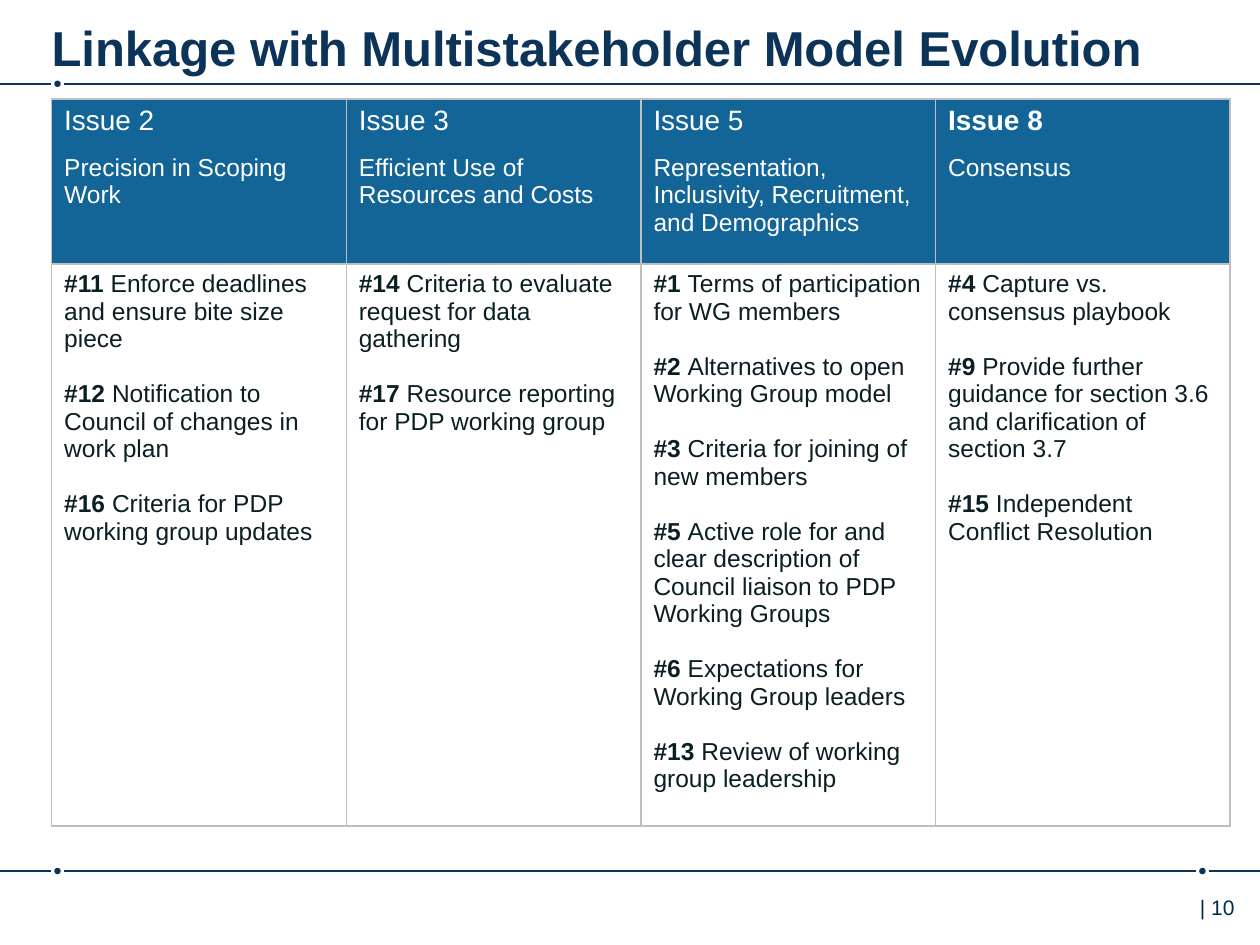
import lxml.etree
import pptx
import pptx.dml.color
import pptx.enum.shapes
import pptx.enum.text
import pptx.oxml
import pptx.oxml.ns
import pptx.util
from pptx.util import Cm

NAVY = pptx.dml.color.RGBColor(0x0C, 0x34, 0x58)
PAGE_NAVY = pptx.dml.color.RGBColor(0x00, 0x2B, 0x49)
BLUE = pptx.dml.color.RGBColor(0x13, 0x65, 0x97)
INK = pptx.dml.color.RGBColor(0x0A, 0x1F, 0x24)
GREY = pptx.dml.color.RGBColor(0xBF, 0xBF, 0xBF)
WHITE = pptx.dml.color.RGBColor(0xFF, 0xFF, 0xFF)

ISSUES = [
    ("Issue 2", "Precision in Scoping Work", [
        ("#11", "Enforce deadlines and ensure bite size piece"),
        ("#12", "Notification to Council of changes in work plan"),
        ("#16", "Criteria for PDP working group updates"),
    ]),
    ("Issue 3", "Efficient Use of Resources and Costs", [
        ("#14", "Criteria to evaluate request for data gathering"),
        ("#17", "Resource reporting for PDP working group"),
    ]),
    ("Issue 5", "Representation, Inclusivity, Recruitment, and Demographics", [
        ("#1", "Terms of participation for WG members"),
        ("#2", "Alternatives to open Working Group model"),
        ("#3", "Criteria for joining of new members"),
        ("#5", "Active role for and clear description of Council liaison "
               "to PDP Working Groups"),
        ("#6", "Expectations for Working Group leaders"),
        ("#13", "Review of working group leadership"),
    ]),
    ("Issue 8", "Consensus", [
        ("#4", "Capture vs. consensus playbook"),
        ("#9", "Provide further guidance for section 3.6 and clarification "
               "of section 3.7"),
        ("#15", "Independent Conflict Resolution"),
    ]),
]


def write(paragraph, text, size=14, color=INK, bold=False):
    run = paragraph.add_run()
    run.text = text
    run.font.name = "Arial"
    run.font.size = pptx.util.Pt(size)
    run.font.color.rgb = color
    run.font.bold = bold


def next_paragraph(frame, space_before):
    paragraph = frame.add_paragraph()
    paragraph.space_before = pptx.util.Pt(space_before)
    return paragraph


class SlideBuilder:
    def __init__(self, presentation):
        self.slide = presentation.slides.add_slide(presentation.slide_layouts[5])

    def title(self, text):
        title = self.slide.shapes.title
        title.left, title.top = Cm(1.04), Cm(0.13)
        title.width, title.height = Cm(22.25), Cm(1.24)
        frame = title.text_frame
        frame.margin_left = frame.margin_right = 0
        frame.margin_top = Cm(0.23)
        frame.auto_size = pptx.enum.text.MSO_AUTO_SIZE.NONE
        frame.vertical_anchor = pptx.enum.text.MSO_ANCHOR.TOP
        paragraph = frame.paragraphs[0]
        paragraph.alignment = pptx.enum.text.PP_ALIGN.LEFT
        write(paragraph, text, size=28, color=NAVY, bold=True)

    def dot(self, x, y, size=0.13):
        dot = self.slide.shapes.add_shape(
            pptx.enum.shapes.MSO_SHAPE.OVAL,
            Cm(x - size / 2), Cm(y - size / 2), Cm(size), Cm(size))
        dot.shadow.inherit = False
        dot.fill.solid()
        dot.fill.fore_color.rgb = NAVY
        dot.line.fill.background()

    def line(self, start, end, y):
        line = self.slide.shapes.add_connector(
            pptx.enum.shapes.MSO_CONNECTOR.STRAIGHT, Cm(start), Cm(y), Cm(end), Cm(y))
        line.line.color.rgb = NAVY
        line.line.width = pptx.util.Pt(1)
        properties = line._element.spPr
        lxml.etree.SubElement(properties, pptx.oxml.ns.qn("a:effectLst"))

    def dotted_rule(self, y, dots, gap=0.13, width=25.4):
        start = 0
        for x in dots:
            self.line(start, x - gap, y)
            self.dot(x, y)
            start = x + gap
        self.line(start, width, y)

    def page_number(self, text):
        box = self.slide.shapes.add_textbox(Cm(23.94), Cm(17.91), Cm(1.4), Cm(1.02))
        box.text_frame.word_wrap = True
        write(box.text_frame.paragraphs[0], text, size=12, color=PAGE_NAVY)

    def style_cell(self, cell, fill):
        properties = cell._tc.get_or_add_tcPr()
        for side in ("lnL", "lnR", "lnT", "lnB"):
            properties.append(pptx.oxml.parse_xml(
                f'<a:{side} {pptx.oxml.ns.nsdecls("a")} w="12700"><a:solidFill>'
                f'<a:srgbClr val="{GREY}"/></a:solidFill></a:{side}>'))
        cell.fill.solid()
        cell.fill.fore_color.rgb = fill

    def issue_table(self, issues):
        table = self.slide.shapes.add_table(
            2, len(issues), Cm(1.04), Cm(2), Cm(23.76), Cm(14.1)).table
        table.rows[0].height, table.rows[1].height = Cm(3.32), Cm(10.78)
        for column, (issue, topic, items) in enumerate(issues):
            header, body = table.cell(0, column), table.cell(1, column)
            self.style_cell(header, BLUE)
            self.style_cell(body, WHITE)
            frame = header.text_frame
            write(frame.paragraphs[0], issue, size=16, color=WHITE,
                  bold=issue == "Issue 8")
            write(next_paragraph(frame, 10), topic, color=WHITE)
            frame = body.text_frame
            for index, (number, text) in enumerate(items):
                paragraph = next_paragraph(frame, 15.7) if index else frame.paragraphs[0]
                write(paragraph, number + " ", bold=True)
                write(paragraph, text)


def main():
    presentation = pptx.Presentation()
    presentation.slide_width, presentation.slide_height = Cm(25.4), Cm(19.05)
    builder = SlideBuilder(presentation)
    builder.dotted_rule(1.69, [1.16])
    builder.dotted_rule(17.56, [1.16, 24.24])
    builder.page_number("| 10")
    builder.title("Linkage with Multistakeholder Model Evolution")
    builder.issue_table(ISSUES)
    presentation.save("out.pptx")


if __name__ == "__main__":
    main()
